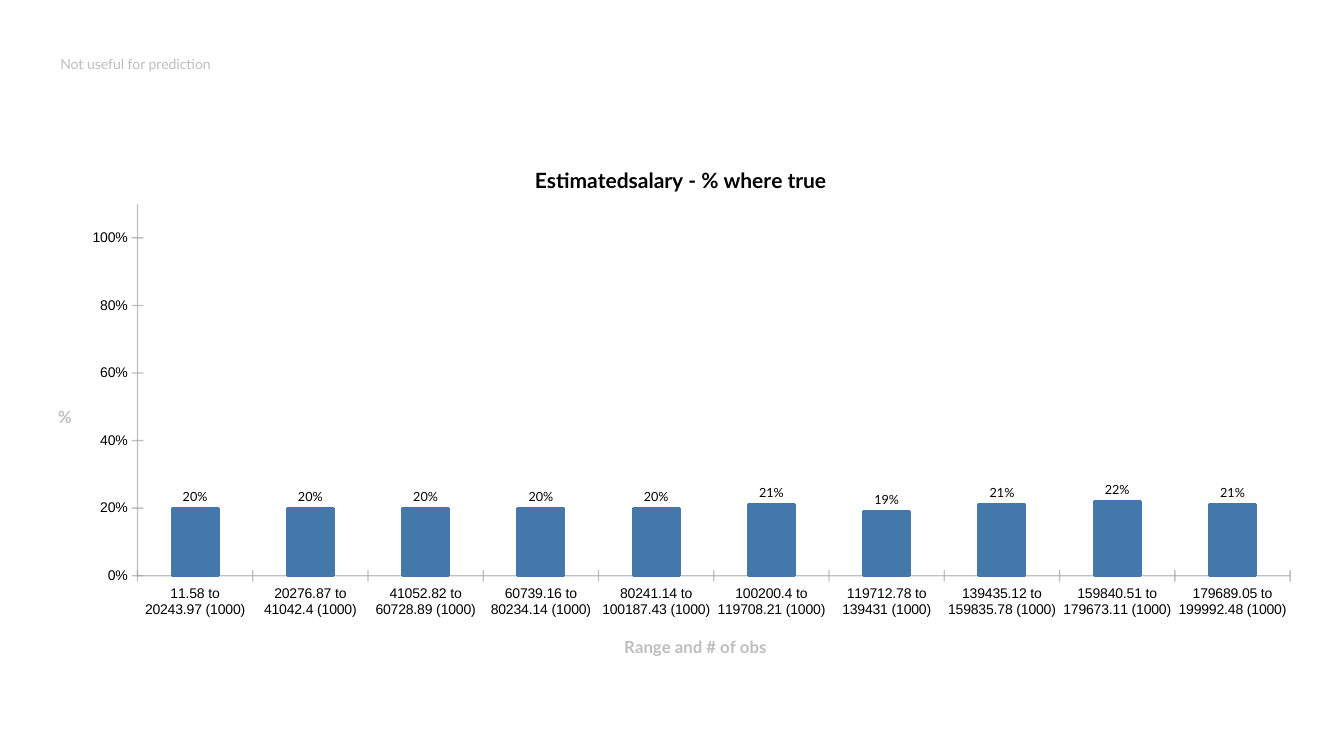
from pptx import Presentation
from pptx.chart.data import CategoryChartData
from pptx.dml.color import RGBColor
from pptx.enum.chart import XL_CHART_TYPE, XL_LABEL_POSITION, XL_TICK_MARK
from pptx.oxml import parse_xml
from pptx.oxml.ns import nsdecls, qn
from pptx.util import Pt

COLUMN = XL_CHART_TYPE.COLUMN_CLUSTERED
OUTSIDE_END = XL_LABEL_POSITION.OUTSIDE_END
CROSS = XL_TICK_MARK.CROSS
NO_TICK = XL_TICK_MARK.NONE

BLACK, GREY, AXIS_GREY, BLUE = "000000", "BEBEBE", "999999", "4477AA"

SALARY_SHARES = [
    ("11.58 to 20243.97 (1000)", 0.2),
    ("20276.87 to 41042.4 (1000)", 0.2),
    ("41052.82 to 60728.89 (1000)", 0.2),
    ("60739.16 to 80234.14 (1000)", 0.2),
    ("80241.14 to 100187.43 (1000)", 0.2),
    ("100200.4 to 119708.21 (1000)", 0.21),
    ("119712.78 to 139431 (1000)", 0.19),
    ("139435.12 to 159835.78 (1000)", 0.21),
    ("159840.51 to 179673.11 (1000)", 0.22),
    ("179689.05 to 199992.48 (1000)", 0.21),
]


def rgb(value):
    return RGBColor.from_string(value)


def place(element, index, inner=False, **lengths):
    for old in element.findall(qn("c:layout")):
        element.remove(old)
    target = '<c:layoutTarget val="inner"/>' if inner else ""
    modes = "".join(f'<c:{key}Mode val="edge"/>' for key in "xy")
    sizes = "".join(f'<c:{key} val="{val}"/>' for key, val in lengths.items())
    element.insert(index, parse_xml(
        f'<c:layout {nsdecls("c")}><c:manualLayout>{target}{modes}{sizes}'
        "</c:manualLayout></c:layout>"))


class SlideBuilder:
    def __init__(self, slide, font="Lato", axis_font="Arial"):
        self.slide = slide
        self.font = font
        self.axis_font = axis_font

    def style(self, font, size, color, name=None, bold=False):
        font.name = name or self.font
        font.size = Pt(size)
        font.bold = bold
        font.color.rgb = rgb(color)

    def text(self, text, left, top, width, height, size, color):
        box = self.slide.shapes.add_textbox(
            Pt(left), Pt(top), Pt(width), Pt(height))
        tf = box.text_frame
        tf.word_wrap = True
        tf.text = text
        self.style(tf.paragraphs[0].runs[0].font, size, color)

    def title(self, title, text, size, color, x, y):
        tf = title.text_frame
        tf.text = text
        self.style(tf.paragraphs[0].runs[0].font, size, color, bold=True)
        tf._txBody.bodyPr.set("rot", "0")
        place(title._element, 1, x=x, y=y)

    def axis(self, axis, text, x, y):
        self.title(axis.axis_title, text, 12, GREY, x, y)
        axis.has_major_gridlines = False
        axis.major_tick_mark = CROSS
        axis.minor_tick_mark = NO_TICK
        self.style(axis.tick_labels.font, 10, BLACK, self.axis_font)
        line = axis.format.line
        line.width = Pt(1)
        line.color.rgb = rgb(AXIS_GREY)
        srgb = axis._element.find(".//" + qn("a:ln")).find(".//" + qn("a:srgbClr"))
        srgb.append(parse_xml(f'<a:alpha {nsdecls("a")} val="60000"/>'))

    def column_chart(self, rows, left, top, width, height):
        data = CategoryChartData(number_format="0%")
        data.categories = [name for name, _ in rows]
        data.add_series("Series 1", [share for _, share in rows])
        chart = self.slide.shapes.add_chart(
            COLUMN, Pt(left), Pt(top), Pt(width), Pt(height), data).chart
        self.style(chart.font, 18, BLACK)
        chart.has_legend = False
        self.title(chart.chart_title, "Estimatedsalary - % where true",
                   15, BLACK, 0.39, 0.04)

        self.axis(chart.category_axis, "Range and # of obs", 0.46, 0.92)
        values = chart.value_axis
        self.axis(values, "%", 0.02, 0.49)
        values.minimum_scale, values.maximum_scale = 0, 1.1
        values.major_unit = 0.2
        values.tick_labels.number_format = "0%"
        values.tick_labels.number_format_is_linked = False
        place(values._element.getparent(), 0, inner=True,
              x=0.084, y=0.12, w=0.896, h=0.695)

        plot = chart.plots[0]
        plot.gap_width = 150
        plot.vary_by_categories = False
        bars = plot.series[0].format
        bars.fill.solid()
        bars.fill.fore_color.rgb = rgb(BLUE)
        bars.line.color.rgb = rgb(BLUE)
        bars.line.width = Pt(2)

        plot.has_data_labels = True
        labels = plot.data_labels
        labels.show_value = True
        labels.position = OUTSIDE_END
        labels.number_format = "0%"
        labels.number_format_is_linked = False
        self.style(labels.font, 9, BLACK)


def main():
    prs = Presentation()
    prs.slide_width, prs.slide_height = Pt(960), Pt(540)
    s = SlideBuilder(prs.slides.add_slide(prs.slide_layouts[6]))
    s.column_chart(SALARY_SHARES, 21, 100, 919, 382)
    s.text("Not useful for prediction", 36, 36, 432, 72, 10, GREY)
    prs.save("out.pptx")


if __name__ == "__main__":
    main()
